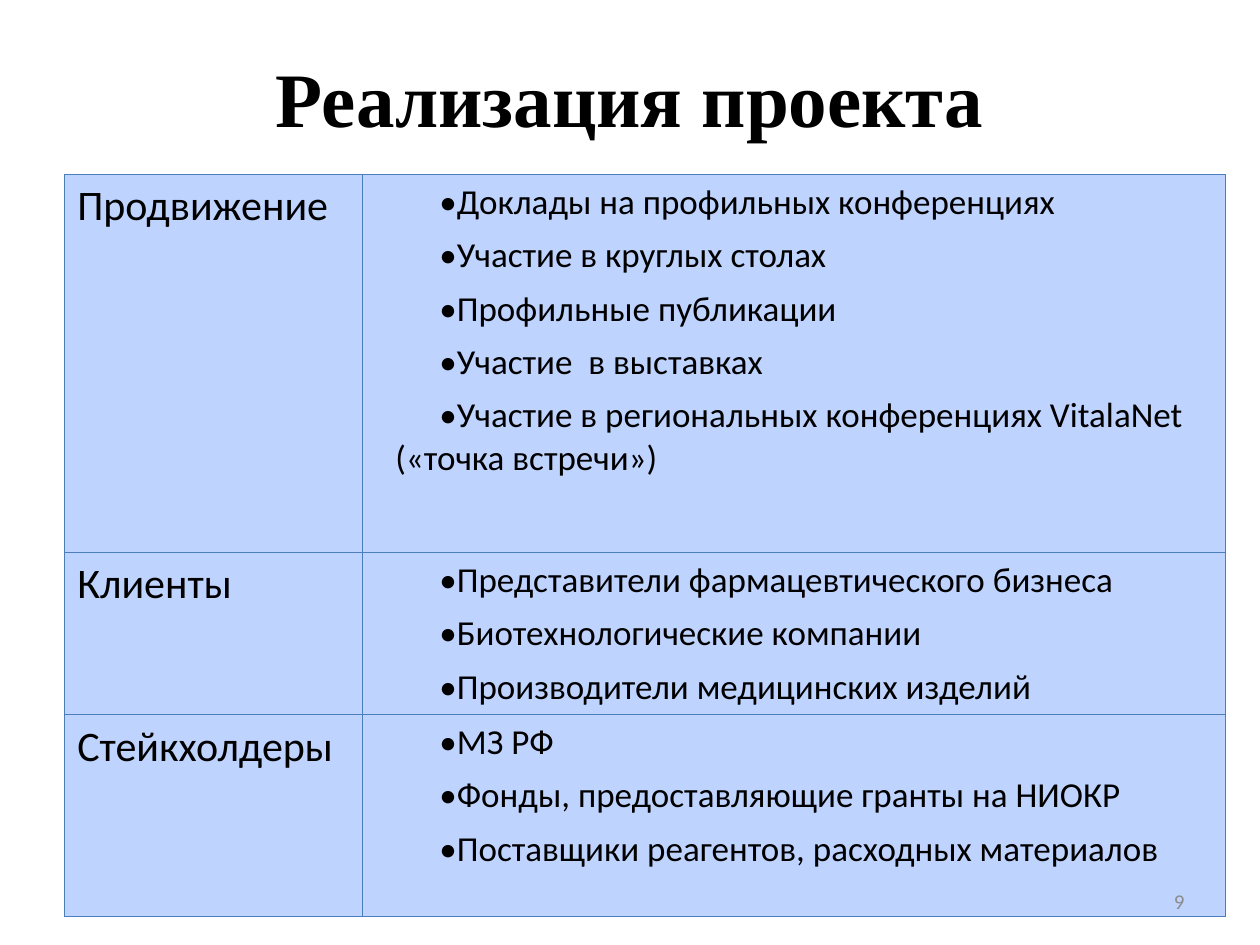
from dataclasses import dataclass

import pptx
import pptx.dml.color
import pptx.enum.text
import pptx.oxml
import pptx.oxml.ns
import pptx.util

Pt = pptx.util.Pt
ALIGN = pptx.enum.text.PP_ALIGN
MIDDLE = pptx.enum.text.MSO_ANCHOR.MIDDLE

COLORS = {
    "text": "000000",
    "cell": "BFD3FF",
    "border": "4B7EBC",
    "number": "8C8C8C",
}
COLUMN_WIDTHS = (170.2, 493.2)


@dataclass
class Section:
    name: str
    height: float
    items: list[str]


SECTIONS = [
    Section("Продвижение", 216, [
        "Доклады на профильных конференциях",
        "Участие в круглых столах",
        "Профильные публикации",
        "Участие  в выставках",
        "Участие в региональных конференциях VitalaNet («точка встречи»)",
    ]),
    Section("Клиенты", 92.6, [
        "Представители фармацевтического бизнеса",
        "Биотехнологические компании",
        "Производители медицинских изделий",
    ]),
    Section("Стейкхолдеры", 115, [
        "МЗ РФ",
        "Фонды, предоставляющие гранты на НИОКР",
        "Поставщики реагентов, расходных материалов",
    ]),
]


def write_text(paragraph, text: str, *, size: float, font: str = "Calibri",
               color: str = "text", bold: bool = False,
               align=ALIGN.LEFT, bullet: bool = False) -> None:
    paragraph.alignment = align
    run = paragraph.add_run()
    run.text = text
    run.font.size = Pt(size)
    run.font.name = font
    run.font.bold = bold
    run.font.color.rgb = pptx.dml.color.RGBColor.from_string(COLORS[color])
    if bullet:
        paragraph.space_before = Pt(6)
        properties = paragraph._p.get_or_add_pPr()
        properties.set("marL", str(Pt(11.5)))
        properties.set("indent", str(Pt(25.2)))
        for tag in (f'buFont {{}} typeface="{font}"', 'buChar {} char="•"'):
            properties.append(pptx.oxml.parse_xml(
                f'<a:{tag.format(pptx.oxml.ns.nsdecls("a"))}/>'))


def format_cell(cell) -> None:
    cell.fill.solid()
    cell.fill.fore_color.rgb = pptx.dml.color.RGBColor.from_string(COLORS["cell"])
    properties = cell._tc.get_or_add_tcPr()
    for position, side in enumerate("LRTB"):
        properties.insert(position, pptx.oxml.parse_xml(
            f'<a:ln{side} {pptx.oxml.ns.nsdecls("a")} w="{Pt(0.75)}"><a:solidFill>'
            f'<a:srgbClr val="{COLORS["border"]}"/></a:solidFill></a:ln{side}>'))


def add_section_table(slide, sections: list[Section]) -> None:
    height = sum(section.height for section in sections)
    table = slide.shapes.add_table(
        len(sections), len(COLUMN_WIDTHS), Pt(37), Pt(99.8),
        Pt(sum(COLUMN_WIDTHS)), Pt(height)).table
    table.first_row = False
    table.horz_banding = False
    for column, width in zip(table.columns, COLUMN_WIDTHS):
        column.width = Pt(width)
    for row, section in zip(table.rows, sections):
        row.height = Pt(section.height)
        name_cell, items_cell = row.cells
        format_cell(name_cell)
        format_cell(items_cell)
        write_text(name_cell.text_frame.paragraphs[0], section.name, size=24)
        frame = items_cell.text_frame
        for index, item in enumerate(section.items):
            paragraph = frame.add_paragraph() if index else frame.paragraphs[0]
            write_text(paragraph, item, size=20, bullet=True)


def main() -> None:
    presentation = pptx.Presentation()
    presentation.slide_width = Pt(720)
    presentation.slide_height = Pt(540)
    slide = presentation.slides.add_slide(presentation.slide_layouts[5])

    # Title
    title = slide.shapes.title
    title.left, title.top, title.width, title.height = Pt(36), Pt(21.6), Pt(648), Pt(67)
    title.text_frame.vertical_anchor = MIDDLE
    write_text(title.text_frame.paragraphs[0], "Реализация проекта", size=44,
               font="Times New Roman", bold=True, align=ALIGN.CENTER)

    # Table of project sections
    add_section_table(slide, SECTIONS)

    # Slide number
    number = slide.shapes.add_textbox(Pt(516), Pt(500.5), Pt(168), Pt(28.8))
    number.text_frame.word_wrap = True
    number.text_frame.vertical_anchor = MIDDLE
    write_text(number.text_frame.paragraphs[0], "9", size=12, color="number",
               align=ALIGN.RIGHT)

    presentation.save("out.pptx")


if __name__ == "__main__":
    main()
